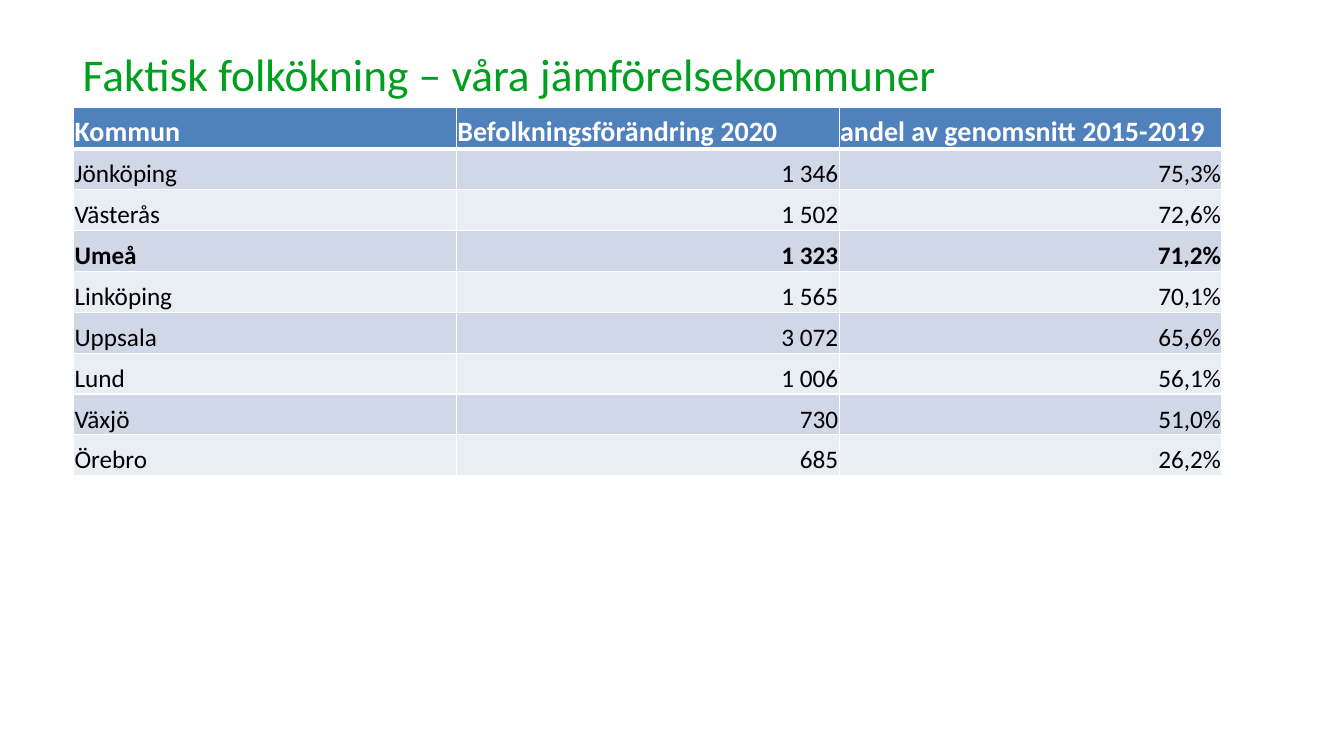
from lxml import etree
from pptx import Presentation
from pptx.dml.color import RGBColor
from pptx.enum import text
from pptx.oxml import ns
from pptx.util import Inches, Pt

GREEN = RGBColor(0x00, 0xA0, 0x1E)
BLUE = RGBColor(0x4F, 0x81, 0xBD)
DARK = RGBColor(0xD0, 0xD8, 0xE8)
LIGHT = RGBColor(0xE9, 0xED, 0xF4)
WHITE = RGBColor(0xFF, 0xFF, 0xFF)
BLACK = RGBColor(0, 0, 0)

ROWS = [
    ("Kommun", "Befolkningsförändring 2020", "andel av genomsnitt 2015-2019"),
    ("Jönköping", "1 346", "75,3%"),
    ("Västerås", "1 502", "72,6%"),
    ("Umeå", "1 323", "71,2%"),
    ("Linköping", "1 565", "70,1%"),
    ("Uppsala", "3 072", "65,6%"),
    ("Lund", "1 006", "56,1%"),
    ("Växjö", "730", "51,0%"),
    ("Örebro", "685", "26,2%"),
]


def style(font, size, color, bold=False):
    font.name, font.size, font.bold = "Calibri", Pt(size), bold
    font.color.rgb = color


def border(cell, widths):
    """Draw white edges; widths maps L, R, T, B to points."""
    props = cell._tc.get_or_add_tcPr()
    for spot, (side, width) in enumerate(widths.items()):
        line = etree.Element(ns.qn(f"a:ln{side}"), w=str(Pt(width)))
        fill = etree.SubElement(line, ns.qn("a:solidFill"))
        etree.SubElement(fill, ns.qn("a:srgbClr"), val=str(WHITE))
        props.insert(spot, line)


deck = Presentation()
deck.slide_width, deck.slide_height = Inches(13.33), Inches(7.5)
slide = deck.slides.add_slide(deck.slide_layouts[5])

title = slide.shapes.title
title.left, title.top = Inches(0.72), Inches(0.42)
title.width, title.height = Inches(11.39), Inches(0.62)
frame = title.text_frame
frame.text = "Faktisk folkökning – våra jämförelsekommuner"
frame.auto_size = text.MSO_AUTO_SIZE.NONE
frame.vertical_anchor = text.MSO_ANCHOR.MIDDLE
para = frame.paragraphs[0]
para.alignment = text.PP_ALIGN.LEFT
para.space_after = Pt(6)
style(para.runs[0].font, 32.4, GREEN)

table = slide.shapes.add_table(
    len(ROWS), 3, Inches(0.73), Inches(1.07), Inches(11.39), Inches(3.65)
).table

FORMAT = {
    "margin_left": Inches(0.01),
    "margin_right": Inches(0.01),
    "margin_top": Inches(0.01),
    "margin_bottom": 0,
    "vertical_anchor": text.MSO_ANCHOR.BOTTOM,
}
for r, row in enumerate(ROWS):
    head = r == 0
    for c, value in enumerate(row):
        cell = table.cell(r, c)
        cell.text = value
        for name, setting in FORMAT.items():
            setattr(cell, name, setting)
        cell.fill.solid()
        cell.fill.fore_color.rgb = BLUE if head else DARK if r % 2 else LIGHT
        border(cell, {"L": 1, "R": 1, "T": 3 if r == 1 else 1, "B": 3 if head else 1})
        para = cell.text_frame.paragraphs[0]
        right = c > 0 and not head
        para.alignment = text.PP_ALIGN.RIGHT if right else text.PP_ALIGN.LEFT
        style(para.runs[0].font, 20 if head else 18, WHITE if head else BLACK,
              head or row[0] == "Umeå")

deck.save("out.pptx")
